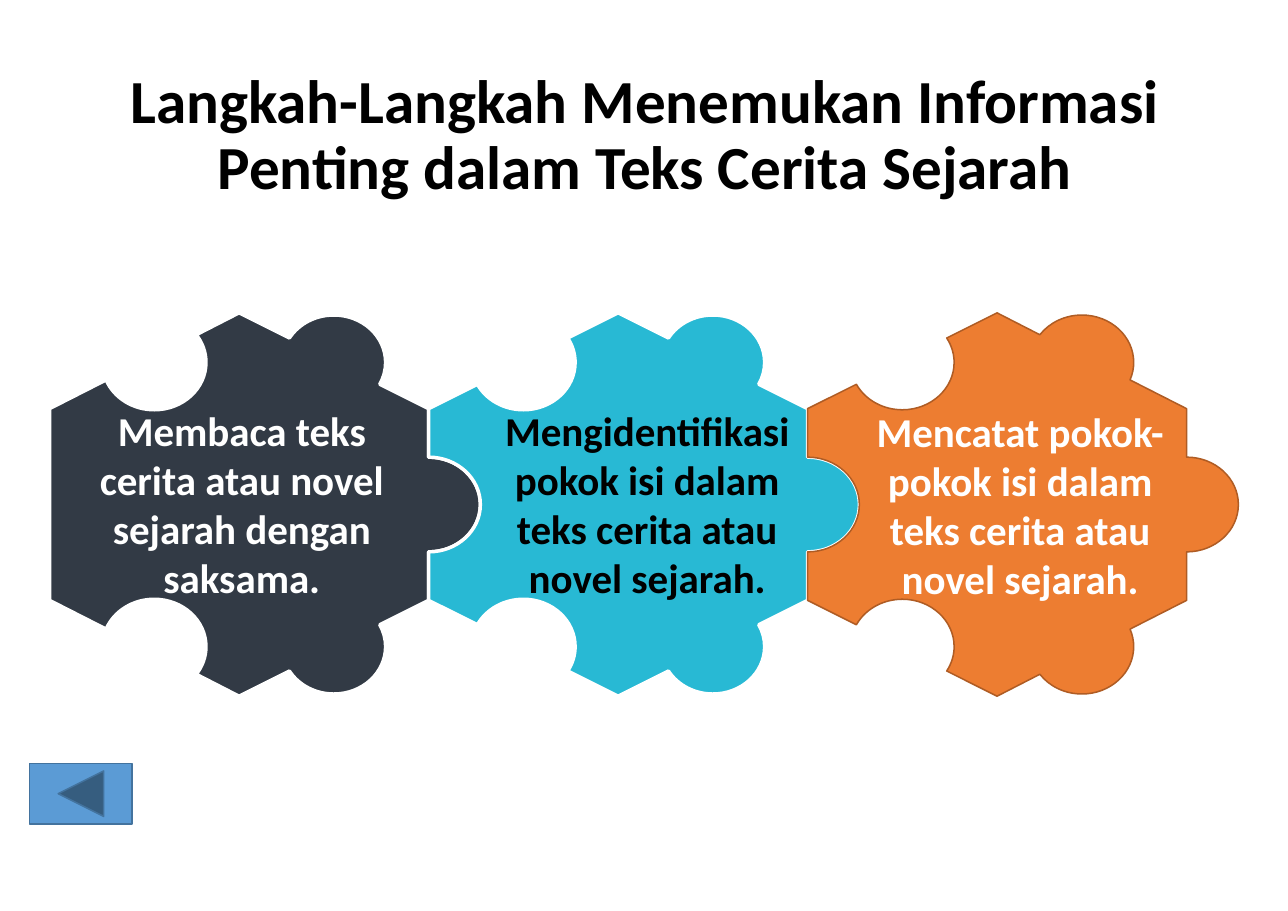
import math
from dataclasses import dataclass

from pptx import Presentation, util as u
from pptx.dml.color import RGBColor
from pptx.enum import shapes, text
from pptx.oxml import ns, xmlchemy


@dataclass(frozen=True)
class Theme:
    font: str = "Calibri"
    title_size: float = 40
    step_size: float = 26.8
    black: str = "000000"
    white: str = "FFFFFF"
    navy: str = "323A45"
    cyan: str = "28B9D4"
    orange: str = "ED7D31"
    orange_line: str = "AF5C24"
    button: str = "5B9BD5"
    button_line: str = "43739E"


@dataclass(frozen=True)
class Point:
    x: float
    y: float
    is_control: bool = False


PIECE_WIDTH, PIECE_LEFT, PIECE_MIDDLE = 3.44, 0.45, 4.58
KNOB_X, KNOB_Y = 0.47, 0.43
QUARTER = math.pi / 2
# Start, centre and end of a knob on the slanted edge, from the piece's left and middle
OUTER_KNOB = ((0.44, -1.09), (0.86, -1.29), (1.26, -1.51))
INNER_KNOB = ((0.51, -1.13), (0.95, -1.29), (1.33, -1.54))


def arc(start, centre, end):
    """Bezier points along a knob's ellipse, split where it crosses its axes."""
    first, last = (
        math.atan2((y - centre[1]) / KNOB_Y, (x - centre[0]) / KNOB_X)
        for x, y in (start, end)
    )
    low, high = sorted((first, last))
    crossings = [n * QUARTER for n in (-1, 0, 1) if low < n * QUARTER < high]
    angles = sorted([first, *crossings, last], reverse=first > last)

    def on_ellipse(angle, pull=0.0):
        """The point at an angle, moved along its tangent by the given pull."""
        x = math.cos(angle) - pull * math.sin(angle)
        y = math.sin(angle) + pull * math.cos(angle)
        return Point(centre[0] + KNOB_X * x, centre[1] + KNOB_Y * y, pull != 0)

    points = [on_ellipse(first)]
    for a, b in zip(angles, angles[1:]):
        pull = 4 / 3 * math.tan((b - a) / 4)
        points += [on_ellipse(a, pull), on_ellipse(b, -pull), on_ellipse(b)]
    return points


def piece_outline(notch, tab, side_notch):
    """Upper half of a puzzle piece, followed by its reflection in the middle line."""
    tab_points = [(PIECE_WIDTH - x, y) for x, y in reversed(tab)]
    upper = arc((KNOB_X, 0), (0, 0), (0, -KNOB_Y)) if side_notch else []
    upper += [Point(0, -0.87), *arc(*notch), Point(PIECE_WIDTH / 2, -1.74)]
    upper += [*arc(*tab_points), Point(PIECE_WIDTH, -0.87)]
    upper += arc(
        (PIECE_WIDTH, -KNOB_Y), (PIECE_WIDTH, 0), (PIECE_WIDTH + KNOB_X, 0)
    )
    return upper + [Point(p.x, -p.y, p.is_control) for p in reversed(upper[:-1])]


def bend_segments(shape, outline):
    """Join each pair of control points and the end after it into one curve."""
    segments = list(shape.element.iter(ns.qn("a:lnTo")))
    flags = [point.is_control for point in outline[1:]]
    index = 0
    while index < len(flags):
        if not flags[index]:
            index += 1
            continue
        curve = xmlchemy.OxmlElement("a:cubicBezTo")
        segments[index].addprevious(curve)
        for segment in segments[index:index + 3]:
            curve.append(segment[0])
            segment.getparent().remove(segment)
        index += 3


class SlideBuilder:
    def __init__(self, slide, theme):
        self.slide = slide
        self.theme = theme

    def paint(self, shape, fill, line, width):
        shape.shadow.inherit = False
        shape.fill.solid()
        shape.fill.fore_color.rgb = RGBColor.from_string(fill)
        shape.line.color.rgb = RGBColor.from_string(line)
        shape.line.width = u.Pt(width)

    def text_box(self, box, words, size, color, line_spacing=None):
        frame = self.slide.shapes.add_textbox(*map(u.Inches, box)).text_frame
        frame.word_wrap = True
        frame.vertical_anchor = text.MSO_ANCHOR.MIDDLE
        paragraph = frame.paragraphs[0]
        paragraph.text = words
        paragraph.alignment = text.PP_ALIGN.CENTER
        paragraph.line_spacing = line_spacing
        paragraph.font.name = self.theme.font
        paragraph.font.size = u.Pt(size)
        paragraph.font.bold = True
        paragraph.font.color.rgb = RGBColor.from_string(color)

    def puzzle_piece(self, left, outline, fill, line, width):
        corners = [
            (u.Inches(left + p.x), u.Inches(PIECE_MIDDLE + p.y)) for p in outline
        ]
        builder = self.slide.shapes.build_freeform(*corners[0])
        builder.add_line_segments(corners[1:], close=True)
        piece = builder.convert_to_shape()
        bend_segments(piece, outline)
        self.paint(piece, fill, line, width)

    def back_button(self, box):
        button = self.slide.shapes.add_shape(
            shapes.MSO_SHAPE.ACTION_BUTTON_BACK_OR_PREVIOUS, *map(u.Inches, box)
        )
        self.paint(button, self.theme.button, self.theme.button_line, 1)


def main():
    presentation = Presentation()
    presentation.slide_width = u.Inches(11.69)
    presentation.slide_height = u.Inches(8.27)
    slide = presentation.slides.add_slide(presentation.slide_layouts[6])
    theme = Theme()
    builder = SlideBuilder(slide, theme)

    builder.text_box(
        (0.38, 0.44, 10.94, 1.6),
        "Langkah-Langkah Menemukan Informasi Penting dalam Teks Cerita Sejarah",
        theme.title_size, theme.black, line_spacing=0.9,
    )

    pieces = [
        (INNER_KNOB, OUTER_KNOB, theme.navy, theme.white, 2.25),
        (OUTER_KNOB, OUTER_KNOB, theme.cyan, theme.white, 2.25),
        (OUTER_KNOB, INNER_KNOB, theme.orange, theme.orange_line, 1),
    ]
    for index, (notch, tab, fill, line, width) in enumerate(pieces):
        outline = piece_outline(notch, tab, side_notch=index > 0)
        left = PIECE_LEFT + index * PIECE_WIDTH
        builder.puzzle_piece(left, outline, fill, line, width)

    steps = [
        ((0.54, 3.62, 3.31, 1.9), theme.white,
         "Membaca teks cerita atau novel sejarah dengan saksama."),
        ((4.37, 3.62, 3.01, 1.9), theme.black,
         "Mengidentifikasi pokok isi dalam teks cerita atau novel sejarah."),
        ((7.8, 3.63, 2.92, 1.9), theme.white,
         "Mencatat pokok-pokok isi dalam teks cerita atau novel sejarah."),
    ]
    for box, color, words in steps:
        builder.text_box(box, words, theme.step_size, color)

    builder.back_button((0.27, 6.93, 0.93, 0.55))
    presentation.save("out.pptx")


if __name__ == "__main__":
    main()
